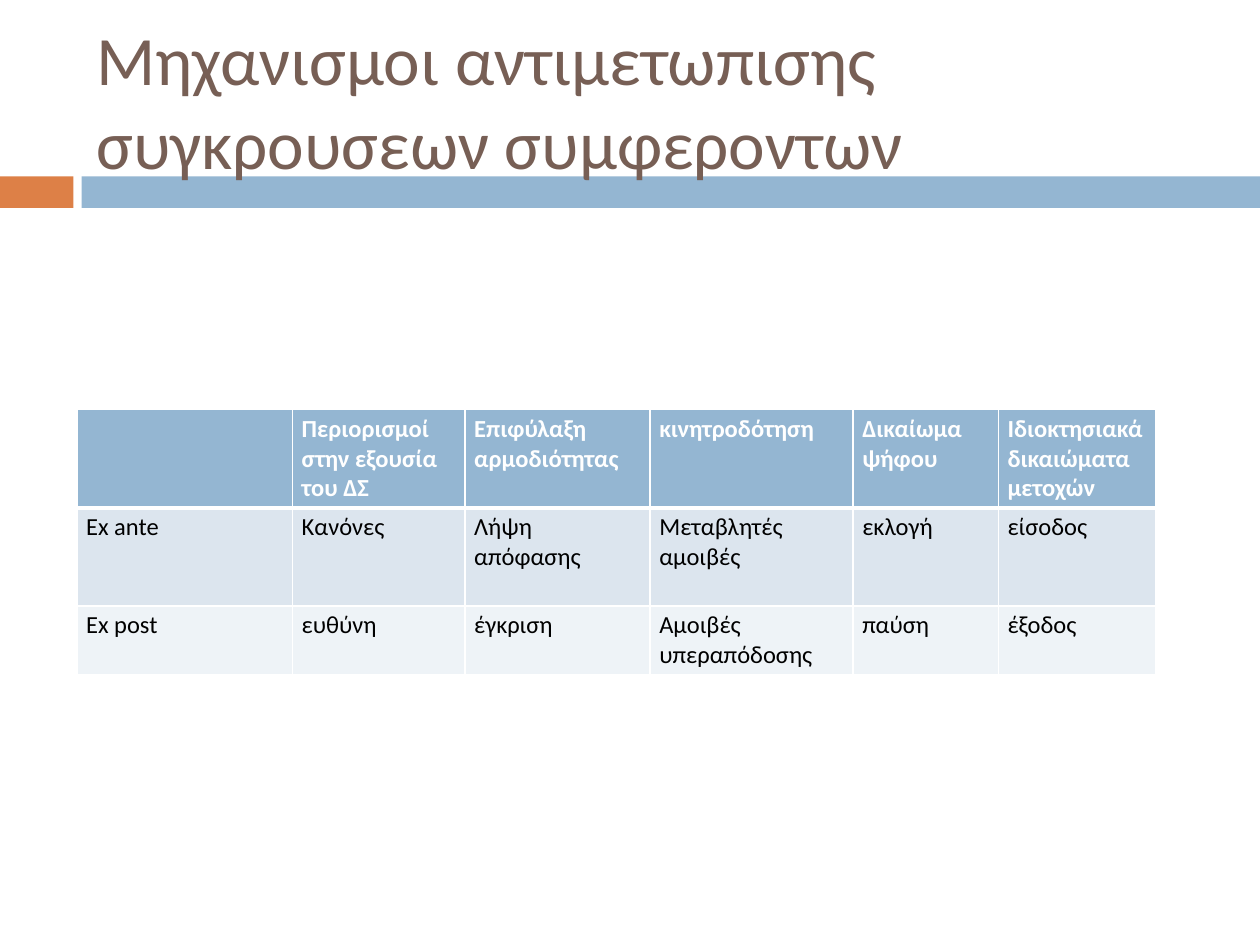
from lxml import etree
from pptx import Presentation
from pptx.dml.color import RGBColor
from pptx.enum.shapes import MSO_SHAPE
from pptx.enum.text import MSO_ANCHOR, PP_ALIGN
from pptx.oxml.ns import qn
from pptx.util import Pt

RECT = MSO_SHAPE.RECTANGLE
MIDDLE = MSO_ANCHOR.MIDDLE
LEFT = PP_ALIGN.LEFT
FONT = "Calibri"
COLORS = {
    "orange": "DD8047",
    "blue": "94B6D2",
    "brown": "775F55",
    "band_dark": "DCE5EE",
    "band_light": "EEF3F7",
    "white": "FFFFFF",
    "black": "000000",
}


def rgb(name):
    return RGBColor.from_string(COLORS[name])


def add_border(cell, side, width):
    """Draw a white line on one side (L, R, T or B) of a table cell."""
    ln = etree.SubElement(cell._tc.get_or_add_tcPr(), qn("a:ln" + side), w=str(Pt(width)))
    fill = etree.SubElement(ln, qn("a:solidFill"))
    etree.SubElement(fill, qn("a:srgbClr"), val=COLORS["white"])


prs = Presentation()
prs.slide_width, prs.slide_height = Pt(720), Pt(540)
s = prs.slides.add_slide(prs.slide_layouts[5])

# Band under the title
for left, width, color in [(0, 42, "orange"), (46.6, 673.4, "blue")]:
    sp = s.shapes.add_shape(RECT, Pt(left), Pt(100.8), Pt(width), Pt(18))
    sp.shadow.inherit = False
    sp.fill.solid()
    sp.fill.fore_color.rgb = rgb(color)
    sp.line.fill.background()

# Title, brought in front of the band
title = s.shapes.title
s.shapes._spTree.append(title._element)
title.left, title.top, title.width, title.height = Pt(48), Pt(18), Pt(642), Pt(78)
tf = title.text_frame
tf.text = "Μηχανισμοι αντιμετωπισης συγκρουσεων συμφεροντων"
tf.word_wrap = True
tf.vertical_anchor = MIDDLE
p = tf.paragraphs[0]
p.alignment = LEFT
p.font.name, p.font.size = FONT, Pt(39.6)
p.font.color.rgb = rgb("brown")

# Table of mechanisms
rows = [
    ["", "Περιορισμοί στην εξουσία του ΔΣ", "Επιφύλαξη αρμοδιότητας",
     "κινητροδότηση", "Δικαίωμα ψήφου", "Ιδιοκτησιακά δικαιώματα μετοχών"],
    ["Ex ante", "Κανόνες", "Λήψη απόφασης", "Μεταβλητές αμοιβές", "εκλογή", "είσοδος"],
    ["Ex post", "ευθύνη", "έγκριση", "Αμοιβές υπεραπόδοσης", "παύση", "έξοδος"],
]
col_widths = [123.2, 98.6, 105.8, 116, 83, 89.8]
row_heights = [56, 56, 39]
row_fills = ["blue", "band_dark", "band_light"]

table = s.shapes.add_table(
    len(rows), len(col_widths), Pt(44), Pt(234),
    Pt(sum(col_widths)), Pt(sum(row_heights))).table
for column, width in zip(table.columns, col_widths):
    column.width = Pt(width)
for i, texts in enumerate(rows):
    table.rows[i].height = Pt(row_heights[i])
    header = i == 0
    for j, text in enumerate(texts):
        cell = table.cell(i, j)
        cell.margin_left = cell.margin_right = Pt(5.2)
        cell.margin_top = cell.margin_bottom = Pt(2.6)
        for side in "LRTB":
            thick = (i, side) in [(0, "B"), (1, "T")]
            add_border(cell, side, 3 if thick else 1)
        cell.fill.solid()
        cell.fill.fore_color.rgb = rgb(row_fills[i])
        cell.text = text
        p = cell.text_frame.paragraphs[0]
        p.font.name, p.font.size, p.font.bold = FONT, Pt(14), header
        p.font.color.rgb = rgb("white" if header else "black")

prs.save("out.pptx")
